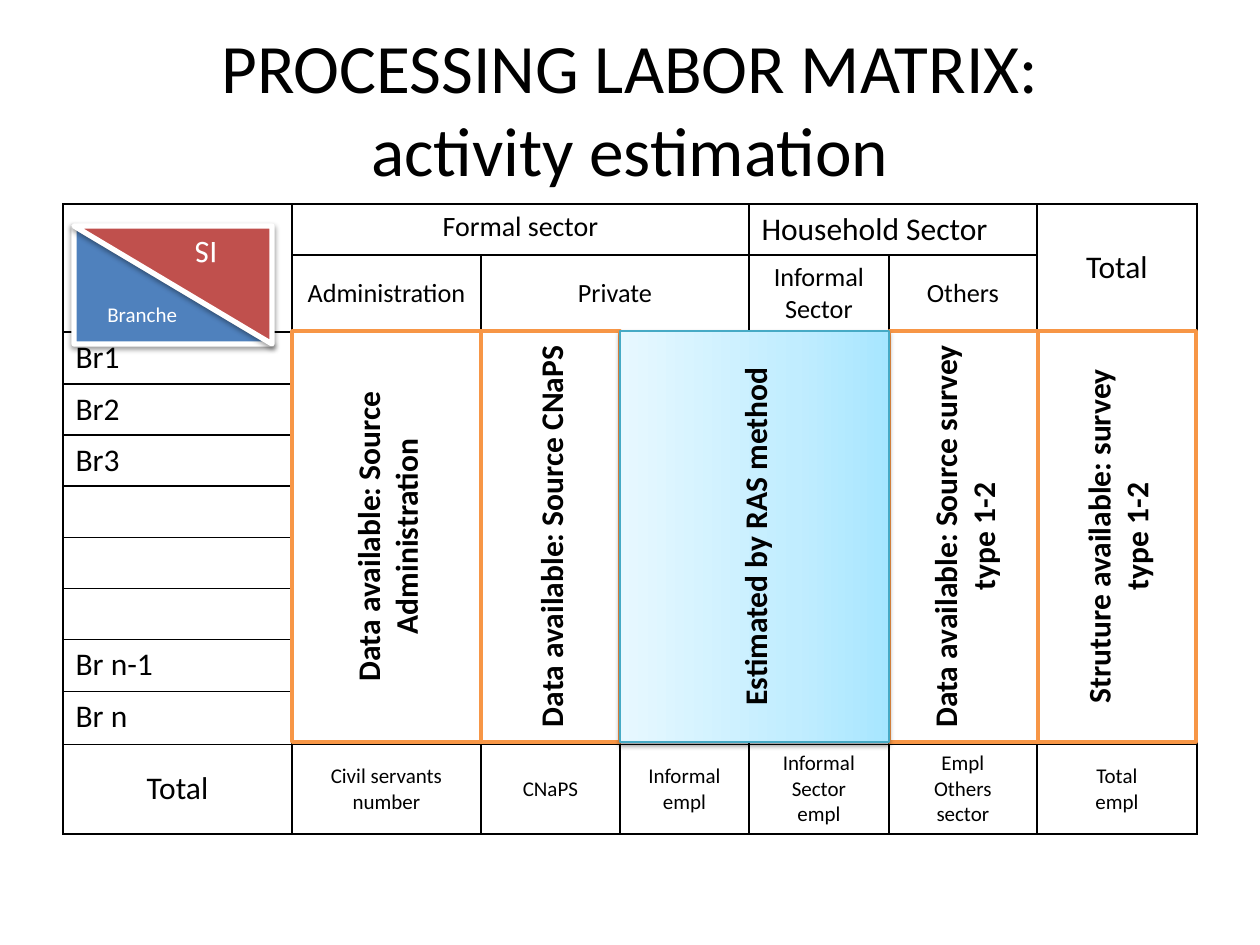
from copy import deepcopy
from dataclasses import dataclass
from itertools import pairwise

from lxml.etree import SubElement
from pptx import Presentation
from pptx.dml.color import RGBColor
from pptx.enum.shapes import MSO_SHAPE
from pptx.enum.text import MSO_ANCHOR, MSO_AUTO_SIZE, PP_ALIGN
from pptx.oxml.ns import qn
from pptx.util import Emu, Pt

PX = 914400 // 126
FONT = "Calibri"
BLACK = RGBColor(0x00, 0x00, 0x00)
WHITE = RGBColor(0xFF, 0xFF, 0xFF)
BLUE = RGBColor(0x4F, 0x81, 0xBD)
RED = RGBColor(0xC0, 0x50, 0x4D)
ORANGE = RGBColor(0xF7, 0x96, 0x46)
TEAL = RGBColor(0x46, 0xAA, 0xC5)
SKY = [(0, RGBColor(0xA7, 0xE6, 0xFF)), (0.35, RGBColor(0xC1, 0xED, 0xFF)),
       (1, RGBColor(0xE7, 0xF8, 0xFF))]

# Table grid lines, in px
COL_EDGES = [63, 292, 481, 620, 749, 889, 1037, 1197]
ROW_EDGES = [204, 255, 331, 383, 434, 485, 536, 587, 638, 690, 743, 832]
BODY_TOP, BODY_HEIGHT = 331, 411


@dataclass
class Cell:
    row: int
    col: int
    text: str
    size: int = 18
    align: PP_ALIGN = PP_ALIGN.CENTER
    anchor: MSO_ANCHOR = MSO_ANCHOR.MIDDLE
    rows: int = 1
    cols: int = 1


@dataclass
class Band:
    """A vertical label covering one or more body columns."""
    left: int
    width: int
    text: str
    estimated: bool = False


LEFT, TOP = PP_ALIGN.LEFT, MSO_ANCHOR.TOP
BRANCHES = {2: "Br1", 3: "Br2", 4: "Br3", 8: "Br n-1", 9: "Br n"}
TOTALS = ["Civil servants number", "CNaPS", "Informal empl",
          "Informal\nSector\nempl", "Empl\nOthers\nsector", "Total\nempl"]
CELLS = [
    Cell(0, 0, "", rows=2),
    Cell(0, 1, "Formal sector", 16, anchor=TOP, cols=3),
    Cell(0, 4, "Household Sector", align=LEFT, anchor=TOP, cols=2),
    Cell(0, 6, "Total", rows=2),
    Cell(1, 1, "Administration", 15),
    Cell(1, 2, "Private", 15, cols=2),
    Cell(1, 4, "Informal Sector", 15),
    Cell(1, 5, "Others", 15),
    *(Cell(row, 0, name, align=LEFT, anchor=TOP) for row, name in BRANCHES.items()),
    Cell(10, 0, "Total"),
    *(Cell(10, col, name, 12) for col, name in enumerate(TOTALS, 1)),
]
BANDS = [
    Band(1038, 158, "Struture available: survey type 1-2"),
    Band(292, 189, "Data available: Source Administration"),
    Band(481, 139, "Data available: Source CNaPS"),
    Band(889, 149, "Data available: Source survey type 1-2"),
    Band(620, 269, "Estimated by RAS method", estimated=True),
]


def px(n: float) -> Emu:
    return Emu(int(n * PX))


def write(tf, text: str, *, size: float = 18, color: RGBColor = BLACK,
          bold: bool = False, align: PP_ALIGN = PP_ALIGN.CENTER) -> None:
    tf.text = text
    for p in tf.paragraphs:
        p.alignment = align
        for r in p.runs:
            r.font.name, r.font.size, r.font.bold = FONT, Pt(size), bold
            r.font.color.rgb = color


def add_borders(cell) -> None:
    tcPr = cell._tc.get_or_add_tcPr()
    for i, tag in enumerate(("a:lnL", "a:lnR", "a:lnT", "a:lnB")):
        ln = SubElement(tcPr, qn(tag), w=str(Pt(1)))
        fill = SubElement(ln, qn("a:solidFill"))
        SubElement(fill, qn("a:srgbClr"), val=str(BLACK))
        tcPr.insert(i, ln)


def add_matrix(s) -> None:
    tbl = s.shapes.add_table(
        len(ROW_EDGES) - 1, len(COL_EDGES) - 1, px(COL_EDGES[0]), px(ROW_EDGES[0]),
        px(COL_EDGES[-1] - COL_EDGES[0]), px(ROW_EDGES[-1] - ROW_EDGES[0])).table
    tbl.first_row = tbl.horz_banding = False
    for col, (a, b) in zip(tbl.columns, pairwise(COL_EDGES)):
        col.width = px(b - a)
    for row, (a, b) in zip(tbl.rows, pairwise(ROW_EDGES)):
        row.height = px(b - a)
    for cell in tbl.iter_cells():
        cell.fill.background()
        add_borders(cell)
    for c in CELLS:
        cell = tbl.cell(c.row, c.col)
        if c.rows > 1 or c.cols > 1:
            cell.merge(tbl.cell(c.row + c.rows - 1, c.col + c.cols - 1))
        cell.vertical_anchor = c.anchor
        write(cell.text_frame, c.text, size=c.size, align=c.align)


def add_box(s, kind: MSO_SHAPE, left: float, top: float, width: int, height: int, *,
            fill: RGBColor, line: RGBColor, weight: float, rotation: int):
    sp = s.shapes.add_shape(kind, px(left), px(top), px(width), px(height))
    sp.rotation = rotation
    sp.shadow.inherit = False
    sp.fill.solid()
    sp.fill.fore_color.rgb = fill
    sp.line.color.rgb = line
    sp.line.width = Pt(weight)
    sp.text_frame.word_wrap = True
    sp.text_frame.vertical_anchor = MSO_ANCHOR.MIDDLE
    return sp


def add_shadow(sp) -> None:
    effects = sp._element.spPr.find(qn("a:effectLst"))
    shadow = SubElement(effects, qn("a:outerShdw"), blurRad=str(Pt(3.1)),
                        dist=str(Pt(1.6)), dir="5400000", rotWithShape="0")
    color = SubElement(shadow, qn("a:srgbClr"), val=str(BLACK))
    SubElement(color, qn("a:alpha"), val="38000")


def add_triangle(s, text: str, fill: RGBColor, rotation: int, size: int,
                 align: PP_ALIGN) -> None:
    sp = add_box(s, MSO_SHAPE.RIGHT_TRIANGLE, 74, 226, 198, 118,
                 fill=fill, line=WHITE, weight=3, rotation=rotation)
    add_shadow(sp)
    write(sp.text_frame, text, size=size, color=WHITE, align=align)


def add_band(s, band: Band) -> None:
    # Turned a quarter, so the length runs along the body height
    offset = (band.width - BODY_HEIGHT) / 2
    sp = add_box(s, MSO_SHAPE.RECTANGLE, band.left + offset, BODY_TOP - offset,
                 BODY_HEIGHT, band.width, fill=WHITE, rotation=270,
                 line=TEAL if band.estimated else ORANGE,
                 weight=0.75 if band.estimated else 2)
    if band.estimated:
        sp.fill.gradient()
        sp.fill.gradient_angle = 90
        stops = sp._element.spPr.find(".//" + qn("a:gsLst"))
        stops.append(deepcopy(stops[-1]))
        for stop, (position, color) in zip(sp.fill.gradient_stops, SKY):
            stop.position, stop.color.rgb = position, color
        add_shadow(sp)
    write(sp.text_frame, band.text, bold=True)


def main() -> None:
    prs = Presentation()
    prs.slide_width, prs.slide_height = px(1260), px(945)
    s = prs.slides.add_slide(prs.slide_layouts[5])

    # Title
    title = s.shapes.title
    title.left, title.top, title.width, title.height = px(63), px(18), px(1134), px(158)
    tf = title.text_frame
    tf.auto_size, tf.vertical_anchor = MSO_AUTO_SIZE.NONE, TOP
    write(tf, "PROCESSING LABOR MATRIX:\vactivity estimation", size=39.6)

    # Labor matrix
    add_matrix(s)

    # Corner key; the upper label is turned upside down with its triangle
    add_triangle(s, "Branche", BLUE, 0, 12, PP_ALIGN.RIGHT)
    add_triangle(s, "IS", RED, 180, 18, PP_ALIGN.CENTER)

    # Data source bands over the body
    for band in BANDS:
        add_band(s, band)

    prs.save("out.pptx")


if __name__ == "__main__":
    main()
